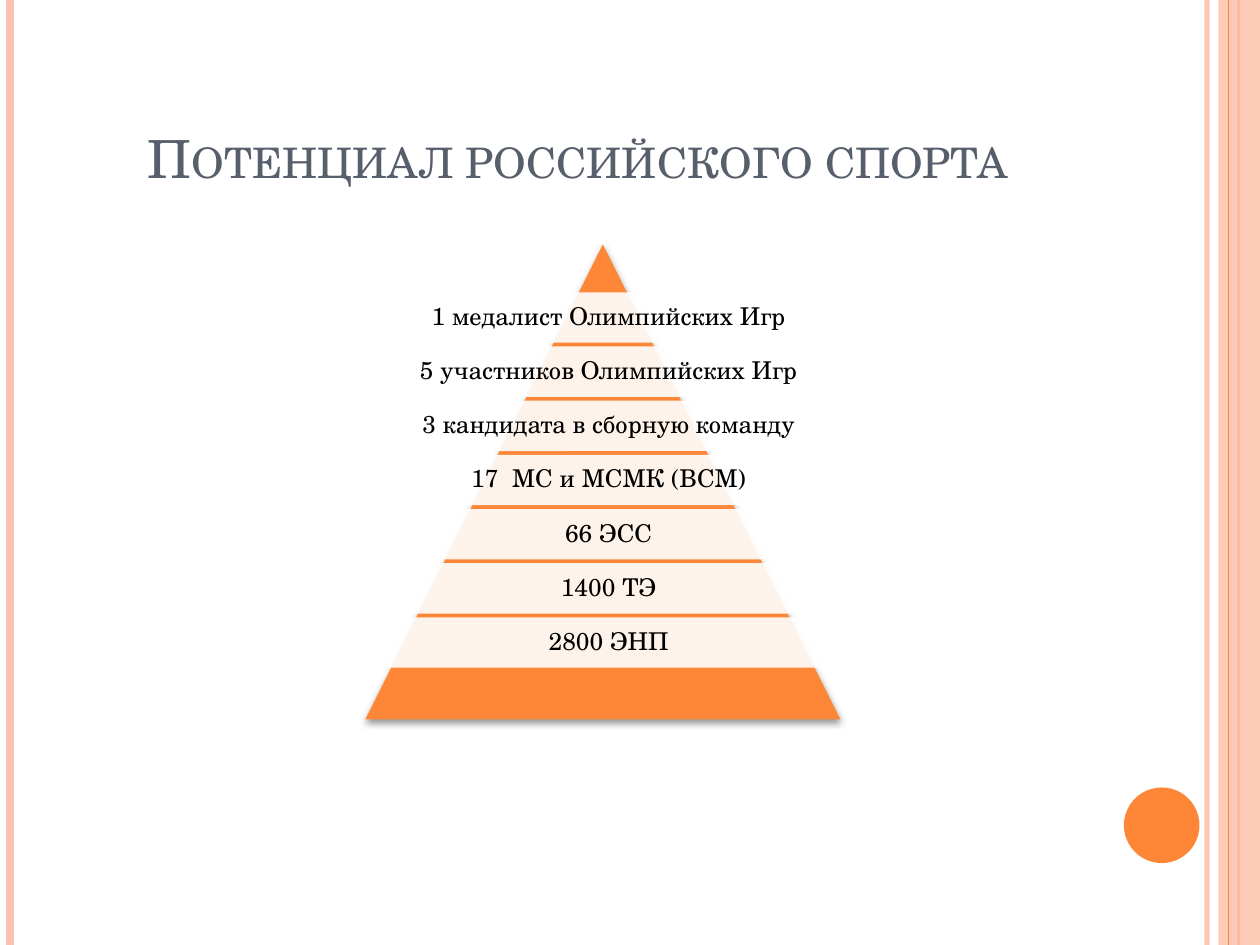
import typing
from dataclasses import dataclass

import pptx
import pptx.dml.color
import pptx.enum.shapes
import pptx.enum.text
import pptx.oxml
import pptx.oxml.ns
import pptx.util

RGB = pptx.dml.color.RGBColor
KIND = pptx.enum.shapes.MSO_SHAPE
ANCHOR = pptx.enum.text.MSO_ANCHOR
ALIGN = pptx.enum.text.PP_ALIGN
Pt = pptx.util.Pt
qn = pptx.oxml.ns.qn

ORANGE = RGB(0xFE, 0x86, 0x37)
PEACH = RGB(0xFE, 0xC3, 0xAE)
SLATE = RGB(0x57, 0x5F, 0x6D)
WHITE = RGB(0xFF, 0xFF, 0xFF)
BLACK = RGB(0, 0, 0)
FONT = "TeX Gyre Schola"

CELL = pptx.util.Inches(0.1)
COLS, ROWS = 100, 75
TOP, STEP = 23.2, 4.3
LABELS = (
    "1 медалист Олимпийских Игр",
    "5 участников Олимпийских Игр",
    "3 кандидата в сборную команду",
    "17  МС и МСМК (ВСМ)",
    "66 ЭСС",
    "1400 ТЭ",
    "2800 ЭНП",
)


@dataclass(frozen=True)
class Box:
    """Place on the grid, in columns and rows."""
    col: float
    row: float
    cols: float
    rows: float

    def size(self) -> dict[str, int]:
        pairs = zip(("left", "top", "width", "height"),
                    (self.col, self.row, self.cols, self.rows))
        return {name: round(cells * CELL) for name, cells in pairs}


@dataclass(frozen=True)
class Stripe:
    col: float
    color: RGB
    width: float
    alpha: int = 100


BACK = (Stripe(95.8, PEACH, 3, 93), Stripe(0.8, PEACH, 4.5), Stripe(98.3, ORANGE, 1.5))
FRONT = Stripe(97.5, ORANGE, 0.75)


def apply(target: typing.Any, values: dict[str, typing.Any]) -> None:
    for name, value in values.items():
        setattr(target, name, value)


def fade(holder: typing.Any, alpha: int) -> None:
    """Set the opacity, in percent, of the solid fill inside an element."""
    if alpha < 100:
        color = next(holder.iter(qn("a:srgbClr")))
        pptx.oxml.ns.nsdecls("a")
        color.append(pptx.oxml.parse_xml(
            f'<a:alpha {pptx.oxml.ns.nsdecls("a")} val="{alpha * 1000}"/>'))


def draw_stripe(shapes: typing.Any, stripe: Stripe) -> None:
    x = round(stripe.col * CELL)
    line = shapes.add_connector(
        pptx.enum.shapes.MSO_CONNECTOR.STRAIGHT, x, 0, x, ROWS * CELL)
    line.line.color.rgb = stripe.color
    line.line.width = Pt(stripe.width)
    props = line.element.spPr
    fade(props, stripe.alpha)
    props.append(props.makeelement(qn("a:effectLst"), {}))


def draw_shape(shapes: typing.Any, kind: KIND, box: Box, color: RGB,
               alpha: int = 100) -> typing.Any:
    shape = shapes.add_shape(kind, **box.size())
    shape.shadow.inherit = False
    shape.fill.solid()
    shape.fill.fore_color.rgb = color
    fade(shape.element.spPr, alpha)
    shape.line.fill.background()
    return shape


def cast_shadow(shape: typing.Any) -> None:
    effects = shape.element.spPr.find(qn("a:effectLst"))
    effects.append(pptx.oxml.parse_xml(
        f'<a:outerShdw {pptx.oxml.ns.nsdecls("a")} blurRad="{Pt(4)}" dist="{Pt(1.6)}" '
        'dir="5400000" rotWithShape="0"><a:srgbClr val="000000">'
        '<a:alpha val="42000"/></a:srgbClr></a:outerShdw>'))


def write(shape: typing.Any, text: str, size: int, color: RGB, anchor: ANCHOR) -> typing.Any:
    """Put one centred line of text in a shape and return its run."""
    apply(shape.text_frame, {"word_wrap": True, "vertical_anchor": anchor,
                             "auto_size": pptx.enum.text.MSO_AUTO_SIZE.NONE})
    line = shape.text_frame.paragraphs[0]
    line.alignment = ALIGN.CENTER
    run = line.add_run()
    run.text = text
    apply(run.font, {"name": FONT, "size": Pt(size)})
    run.font.color.rgb = color
    return run


def draw_label(shapes: typing.Any, index: int, text: str) -> None:
    box = Box(27.4, TOP + index * STEP, 41.8, 4)
    bar = draw_shape(shapes, KIND.ROUNDED_RECTANGLE, box, WHITE, 90)
    write(bar, text, 14, BLACK, ANCHOR.MIDDLE)
    pad = round(0.8 * CELL)
    apply(bar.text_frame, {f"margin_{side}": pad
                           for side in ("left", "right", "top", "bottom")})
    bar.text_frame.paragraphs[0].line_spacing = 0.9


def main() -> None:
    deck = pptx.Presentation()
    apply(deck, {"slide_width": COLS * CELL, "slide_height": ROWS * CELL})
    slide = deck.slides.add_slide(deck.slide_layouts[5])
    shapes = slide.shapes

    title = shapes.title
    apply(title, Box(5, 3, 81.7, 12.5).size())
    run = write(title, "Потенциал российского спорта", 30, SLATE, ANCHOR.BOTTOM)
    run.font.element.set("cap", "small") if hasattr(run.font, "element") else \
        next(title.element.iter(qn("a:rPr"))).set("cap", "small")

    for stripe in BACK:
        draw_stripe(shapes, stripe)
    draw_shape(shapes, KIND.RECTANGLE, Box(96.7, 0, 3.3, ROWS), PEACH, 87)
    draw_stripe(shapes, FRONT)
    draw_shape(shapes, KIND.OVAL, Box(89.2, 62.5, 6, 6), ORANGE)

    peak = draw_shape(shapes, KIND.ISOSCELES_TRIANGLE, Box(29, 19.4, 37.7, 37.7), ORANGE)
    cast_shadow(peak)
    for index, text in enumerate(LABELS):
        draw_label(shapes, index, text)

    deck.save("out.pptx")


if __name__ == "__main__":
    main()
